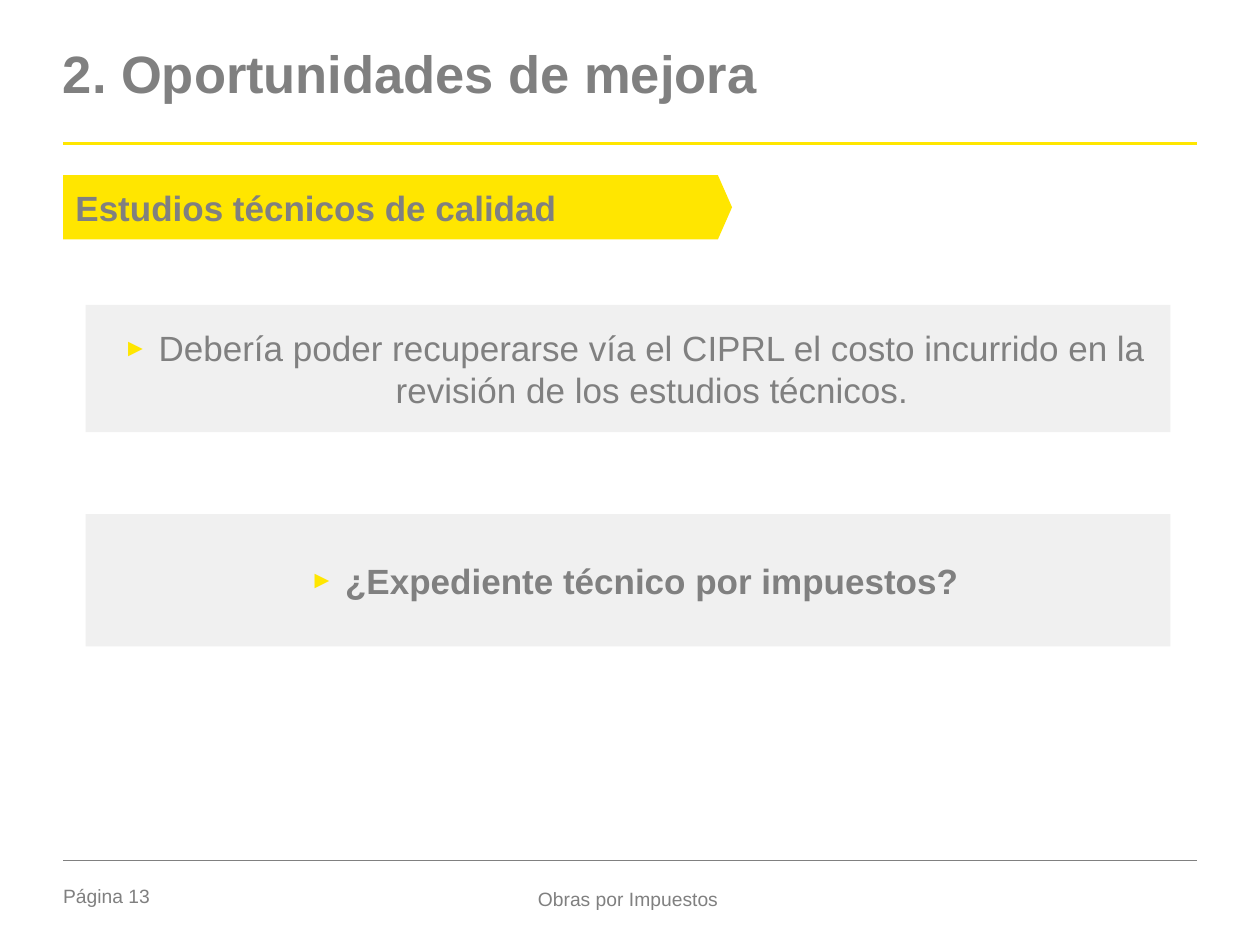
from lxml import etree
from pptx import Presentation
from pptx import util as u
from pptx.dml.color import RGBColor
from pptx.enum import shapes, text
from pptx.oxml.ns import qn

GREY = RGBColor(0x80, 0x80, 0x80)
YELLOW = RGBColor(0xFF, 0xE6, 0x00)
PALE = RGBColor(0xF0, 0xF0, 0xF0)
FONT = "Arial"
LEFT, WIDTH = 0.5, 9
FOOTER_TOP, FOOTER_HEIGHT = 7.02, 0.22
POINT_LEFT, POINT_WIDTH = 0.68, 8.61

TITLE = "2. Oportunidades de mejora"
TOPIC = "Estudios técnicos de calidad"
POINTS = [
    ("Debería poder recuperarse vía el CIPRL el costo incurrido en la "
     "revisión de los estudios técnicos.", 2.42, 1.01, False),
    ("¿Expediente técnico por impuestos?", 4.08, 1.05, True),
]
RULES = [(1.14, YELLOW, 1.5), (6.83, GREY, 0.25)]
FOOTERS = [
    ("Página 13", LEFT, 0.79, text.PP_ALIGN.LEFT, text.MSO_ANCHOR.TOP),
    ("Obras por Impuestos", 3.42, 3.13, text.PP_ALIGN.CENTER, text.MSO_ANCHOR.MIDDLE),
]


def inches(*lengths):
    return [u.Inches(length) for length in lengths]


def write(holder, words, size, bold=False, align=text.PP_ALIGN.LEFT,
          anchor=text.MSO_ANCHOR.TOP, insets=(0, 0), bullet=False):
    frame = holder.text_frame
    frame.word_wrap = True
    frame.vertical_anchor = anchor
    frame.margin_left = frame.margin_right = u.Inches(insets[0])
    frame.margin_top = frame.margin_bottom = u.Inches(insets[1])
    paragraph = frame.paragraphs[0]
    paragraph.text = words
    paragraph.alignment = align
    if bullet:
        add_bullet(paragraph)
    font = paragraph.font
    font.name, font.size, font.bold = FONT, u.Pt(size), bold
    font.color.rgb = GREY
    return paragraph


def add_bullet(paragraph):
    props = paragraph._p.get_or_add_pPr()
    props.set("marL", str(u.Inches(0.38)))
    props.set("indent", str(u.Inches(-0.28)))
    colour = etree.SubElement(props, qn("a:buClr"))
    etree.SubElement(colour, qn("a:srgbClr"), val=str(YELLOW))
    etree.SubElement(props, qn("a:buSzPct"), val="70000")
    etree.SubElement(props, qn("a:buFont"), typeface=FONT)
    etree.SubElement(props, qn("a:buChar"), char="►")


def add_panel(slide, kind, box, colour):
    panel = slide.shapes.add_shape(kind, *inches(*box))
    panel.shadow.inherit = False
    panel.fill.solid()
    panel.fill.fore_color.rgb = colour
    panel.line.fill.background()
    return panel


def add_rule(slide, top, colour, weight):
    rule = slide.shapes.add_connector(
        shapes.MSO_CONNECTOR.STRAIGHT, *inches(LEFT, top, LEFT + WIDTH, top))
    rule.line.color.rgb = colour
    rule.line.width = u.Pt(weight)
    etree.SubElement(rule._element.spPr, qn("a:effectLst"))


def main():
    deck = Presentation()
    deck.slide_width, deck.slide_height = inches(10, 7.5)
    slide = deck.slides.add_slide(deck.slide_layouts[6])

    for rule in RULES:
        add_rule(slide, *rule)

    title = slide.shapes.add_textbox(*inches(LEFT, 0.4, WIDTH, 0.94))
    write(title, TITLE, 30, bold=True).line_spacing = 0.85

    topic = add_panel(slide, shapes.MSO_SHAPE.PENTAGON, (LEFT, 1.39, 5.31, 0.51), YELLOW)
    topic.adjustments[0] = 0.22
    write(topic, TOPIC, 20, bold=True, align=text.PP_ALIGN.JUSTIFY,
          anchor=text.MSO_ANCHOR.MIDDLE, insets=(0.1, 0.05))

    for words, top, height, bold in POINTS:
        point = add_panel(slide, shapes.MSO_SHAPE.RECTANGLE,
                          (POINT_LEFT, top, POINT_WIDTH, height), PALE)
        write(point, words, 20, bold, text.PP_ALIGN.CENTER,
              text.MSO_ANCHOR.MIDDLE, bullet=True)

    for words, left, width, align, anchor in FOOTERS:
        footer = slide.shapes.add_textbox(*inches(left, FOOTER_TOP, width, FOOTER_HEIGHT))
        write(footer, words, 11, align=align, anchor=anchor)

    deck.save("out.pptx")


if __name__ == "__main__":
    main()
